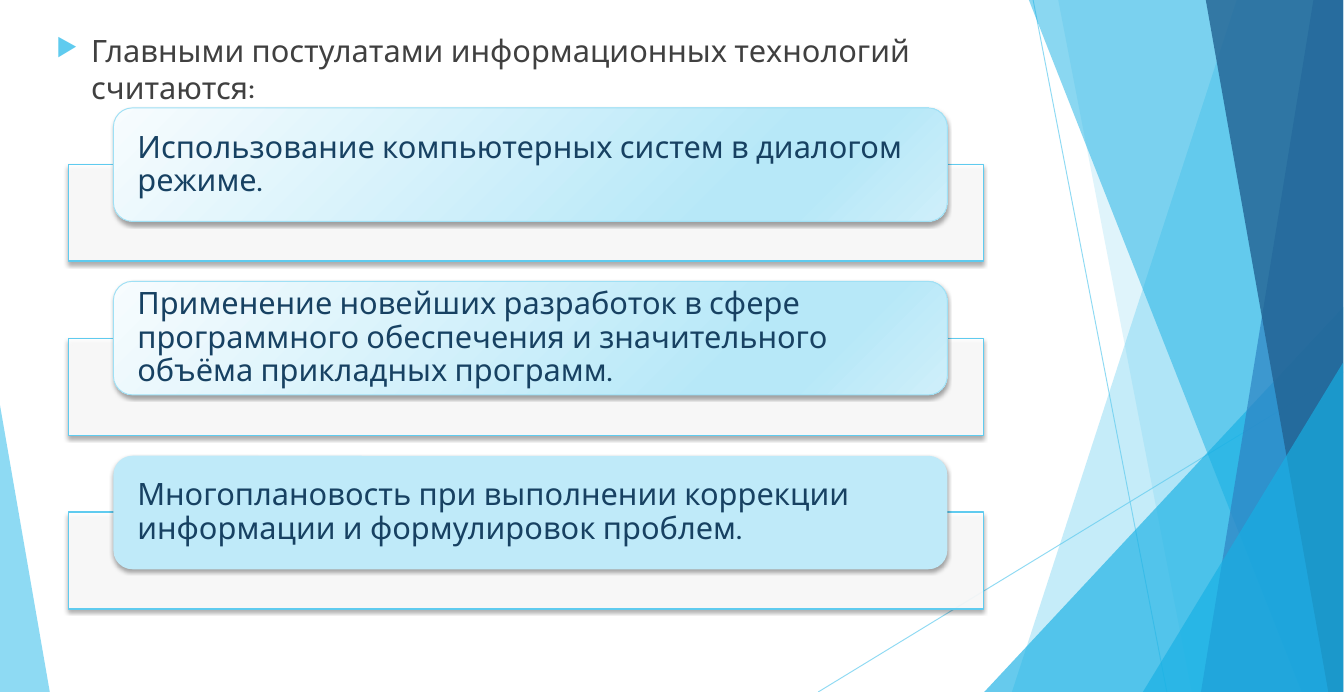
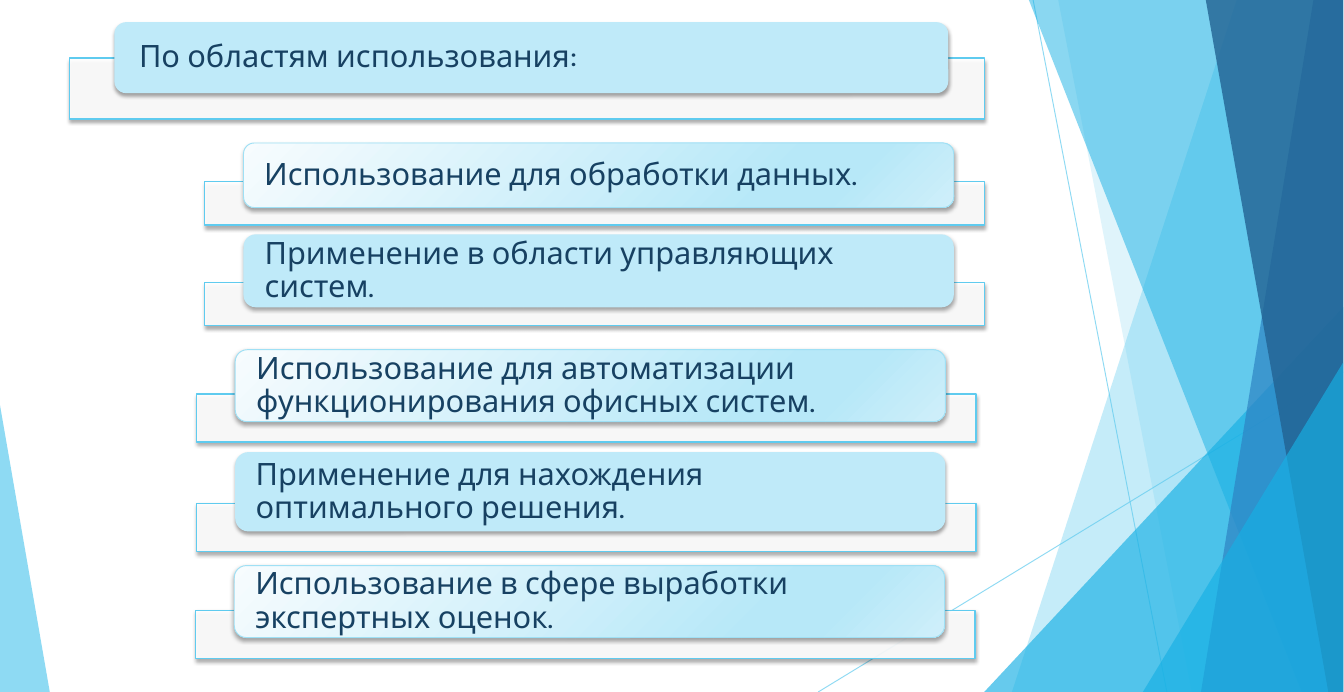
from lxml import etree
from pptx import Presentation
from pptx.dml.color import RGBColor
from pptx.enum.shapes import MSO_CONNECTOR, MSO_SHAPE
from pptx.enum.text import MSO_ANCHOR, PP_ALIGN
from pptx.oxml.ns import qn
from pptx.util import Pt

RECT, ROUND = MSO_SHAPE.RECTANGLE, MSO_SHAPE.ROUNDED_RECTANGLE
TRI = MSO_SHAPE.ISOSCELES_TRIANGLE
LINE = MSO_CONNECTOR.STRAIGHT
MID, TOP, LEFT = MSO_ANCHOR.MIDDLE, MSO_ANCHOR.TOP, PP_ALIGN.LEFT
PX = 9144
WIDE, HIGH, EDGE = 1457, 750, 1456
SKY, AQUA, BLUE, NAVY = "5FCBEF", "17B0E4", "2E83C3", "226292"
WHITE, PALE, RIM, INK, GREY = "FFFFFF", "BFEAF9", "9FE0F5", "174162", "404040"
FADE = ((0, "F7FCFE"), (74, "B7E8F8"), (83, "B7E8F8"), (100, "CFEFFA"))
FONT, SIZE = "Karla", 24

rgb = RGBColor.from_string


def paint(shape, color, alpha=100, line=None, width=1, shade=False):
    shape.shadow.inherit = False
    props = shape.element.spPr
    if color:
        shape.fill.solid()
        shape.fill.fore_color.rgb = rgb(color)
        if alpha < 100:
            tone = props.find(".//" + qn("a:srgbClr"))
            etree.SubElement(tone, qn("a:alpha"), val=str(alpha * 1000))
    else:
        shape.fill.gradient()
        shape.fill.gradient_angle = 315
        stops = props.find(".//" + qn("a:gsLst"))
        for old in list(stops):
            stops.remove(old)
        for spot, tone in FADE:
            stop = etree.SubElement(stops, qn("a:gs"), pos=str(spot * 1000))
            etree.SubElement(stop, qn("a:srgbClr"), val=tone)
    if line:
        shape.line.color.rgb = rgb(line)
        shape.line.width = Pt(width)
    else:
        shape.line.fill.background()
    if shade:
        glow = etree.SubElement(props.find(qn("a:effectLst")), qn("a:outerShdw"),
                                blurRad="38100", dist="25400", dir="5400000",
                                rotWithShape="0")
        tone = etree.SubElement(glow, qn("a:srgbClr"), val="000000")
        etree.SubElement(tone, qn("a:alpha"), val="35000")


def write(shape, text, color=INK, side=10, edge=0, anchor=MID, space=1.0, bullet=None):
    frame = shape.text_frame
    frame.word_wrap = True
    frame.vertical_anchor = anchor
    frame.margin_left = frame.margin_right = side * PX
    frame.margin_top = frame.margin_bottom = edge * PX
    para = frame.paragraphs[0]
    para.alignment = LEFT
    para.line_spacing = space
    run = para.add_run()
    run.text = text
    run.font.name, run.font.size = FONT, Pt(SIZE)
    run.font.color.rgb = rgb(color)
    if bullet:
        para.space_before = Pt(10)
        props = para._p.get_or_add_pPr()
        props.set("marL", str(38 * PX))
        props.set("indent", str(-38 * PX))
        tint = etree.SubElement(props, qn("a:buClr"))
        etree.SubElement(tint, qn("a:srgbClr"), val=SKY)
        etree.SubElement(props, qn("a:buSzPct"), val="80000")
        etree.SubElement(props, qn("a:buChar"), char=bullet)


deck = Presentation()
deck.slide_width, deck.slide_height = WIDE * PX, HIGH * PX
blank = deck.slide_layouts[6]
first, second = [deck.slides.add_slide(blank) for _ in range(2)]

decor = first.shapes.add_group_shape()
for ends in ((1120, 0, 1265, HIGH), (EDGE, 403, 887, HIGH)):
    ray = decor.shapes.add_connector(LINE, *[n * PX for n in ends])
    ray.line.color.rgb = rgb(SKY)
    ray.line.width = Pt(0.75)
    props = ray.element.spPr
    tone = props.find(".//" + qn("a:srgbClr"))
    etree.SubElement(tone, qn("a:alpha"), val="70000")
    etree.SubElement(props, qn("a:effectLst"))

shards = (
    (SKY, 36, None, (1341, 1097)),
    (SKY, 20, None, (1147, 1292)),
    (AQUA, 66, 1, (1067, 333, 389, 417)),
    (AQUA, 50, None, (1115, 1411)),
    (BLUE, 70, None, (1424, 1302)),
    (NAVY, 80, None, (1307, 1440)),
    (AQUA, 66, 1, (1239, 393, 217, 357)),
    (SKY, 70, 0, (0, 439, 54, 311)),
)
for color, alpha, tip, spots in shards:
    if tip is None:
        head, foot = spots
        pen = decor.shapes.build_freeform(head, -1, scale=PX)
        pen.add_line_segments([(EDGE, -1), (EDGE, HIGH), (foot, HIGH)], close=True)
        shard = pen.convert_to_shape()
    else:
        shard = decor.shapes.add_shape(TRI, *[n * PX for n in spots])
        shard.adjustments[0] = tip
    paint(shard, color, alpha)
blank.shapes.element.append(decor.element)

intro = first.shapes.add_textbox(51 * PX, 30 * PX, 1067 * PX, 164 * PX)
write(intro, "Главными постулатами информационных технологий считаются:",
      color=GREY, edge=5, anchor=TOP, bullet="▶")

cards = (
    (first, 74, 992, 178, 105, 117, 123, None,
     "Использование компьютерных систем в диалогом режиме."),
    (first, 74, 992, 367, 105, 305, 123, None,
     "Применение новейших разработок в сфере программного обеспечения "
     "и значительного объёма прикладных программ."),
    (first, 74, 992, 555, 105, 494, 123, PALE,
     "Многоплановость при выполнении коррекции информации и формулировок проблем."),
    (second, 75, 992, 63, 66, 24, 77, PALE,
     "По областям использования:"),
    (second, 222, 845, 197, 47, 155, 70, None,
     "Использование для обработки данных."),
    (second, 222, 845, 306, 47, 254, 79, PALE,
     "Применение в области управляющих систем."),
    (second, 213, 845, 427, 52, 379, 78, None,
     "Использование для автоматизации функционирования офисных систем."),
    (second, 213, 845, 546, 52, 490, 86, PALE,
     "Применение для нахождения оптимального решения."),
    (second, 212, 845, 662, 52, 613, 78, None,
     "Использование в сфере выработки экспертных оценок."),
)
for slide, left, width, low, deep, top, tall, color, text in cards:
    panel = slide.shapes.add_shape(RECT, left * PX, low * PX, width * PX, deep * PX)
    paint(panel, WHITE, 90, line=SKY, shade=True)
    span = round(width * 0.911)
    plate = slide.shapes.add_shape(ROUND, (left + width // 20) * PX, top * PX,
                                   span * PX, tall * PX)
    paint(plate, color, line=None if color else RIM, width=0.75, shade=True)
    write(plate, text, side=width // 38 - tall // 20, space=0.9)

deck.save("out.pptx")
